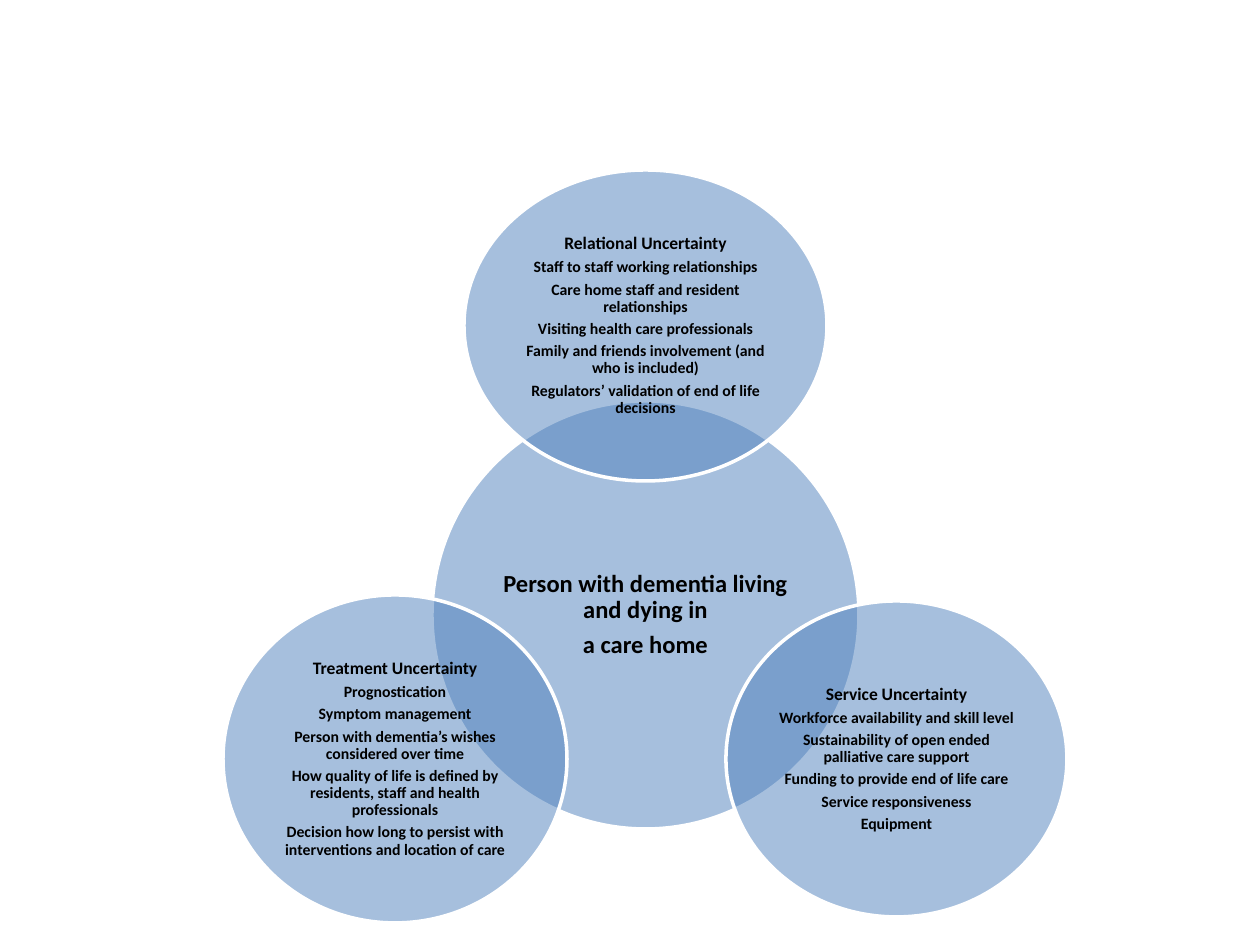
from dataclasses import dataclass

from lxml import etree
from pptx import Presentation
from pptx.dml.color import RGBColor
from pptx.enum.shapes import MSO_SHAPE
from pptx.enum.text import MSO_ANCHOR, PP_ALIGN
from pptx.oxml.ns import qn
from pptx.util import Emu, Pt

ELLIPSE = MSO_SHAPE.OVAL
CENTER = PP_ALIGN.CENTER
MIDDLE = MSO_ANCHOR.MIDDLE

PIXELS_PER_INCH = 126
EMU_PER_INCH = 914400
FONT = "Calibri"
COLORS = {"circle": "4F81BD", "outline": "FFFFFF", "text": "000000"}
OPACITY_PERCENT = 50
LINE_SPACING = 0.9
GAP_RATIO = 0.33


@dataclass(frozen=True)
class Circle:
    left: int
    top: int
    width: int
    height: int
    lines: tuple[str, ...]
    heading_size: int = 10
    body_size: int = 9
    inset: int = 1


CIRCLES = (
    Circle(432, 401, 427, 428, (
        "Person with dementia living and dying in",
        "a care home",
    ), heading_size=14, body_size=14, inset=2),
    Circle(464, 170, 363, 311, (
        "Relational Uncertainty",
        "Staff to staff working relationships",
        "Care home staff and resident relationships",
        "Visiting health care professionals",
        "Family and friends involvement (and who is included)",
        "Regulators’ validation of end of life decisions",
    )),
    Circle(726, 601, 341, 316, (
        "Service Uncertainty",
        "Workforce availability and skill level",
        "Sustainability of open ended palliative care support",
        "Funding to provide end of life care",
        "Service responsiveness",
        "Equipment",
    )),
    Circle(223, 595, 344, 328, (
        "Treatment Uncertainty",
        "Prognostication",
        "Symptom management",
        "Person with dementia’s wishes considered over time",
        "How quality of life is defined by residents, staff and health professionals",
        "Decision how long to persist with interventions and location of care",
    )),
)


def px(length: int) -> Emu:
    return Emu(round(length * EMU_PER_INCH / PIXELS_PER_INCH))


def color(name: str) -> RGBColor:
    return RGBColor.from_string(COLORS[name])


def set_opacity(shape, percent: int) -> None:
    fill_color = shape._element.spPr.find(qn("a:solidFill"))[0]
    alpha = etree.SubElement(fill_color, qn("a:alpha"))
    alpha.set("val", str(percent * 1000))


def write_paragraph(paragraph, text: str, *, size: int, bold: bool = True) -> None:
    paragraph.alignment = CENTER
    paragraph.line_spacing = LINE_SPACING
    paragraph.space_after = Pt(GAP_RATIO * size)
    run = paragraph.add_run()
    run.text = text
    run.font.name = FONT
    run.font.size = Pt(size)
    run.font.bold = bold
    run.font.color.rgb = color("text")


def draw_circle(slide, circle: Circle) -> None:
    shape = slide.shapes.add_shape(
        ELLIPSE, px(circle.left), px(circle.top), px(circle.width), px(circle.height)
    )
    shape.shadow.inherit = False
    shape.fill.solid()
    shape.fill.fore_color.rgb = color("circle")
    set_opacity(shape, OPACITY_PERCENT)
    shape.line.color.rgb = color("outline")
    shape.line.width = Pt(2)

    frame = shape.text_frame
    frame.word_wrap = True
    frame.vertical_anchor = MIDDLE
    frame.margin_left = frame.margin_right = px(circle.inset)
    frame.margin_top = frame.margin_bottom = px(circle.inset)
    for index, line in enumerate(circle.lines):
        paragraph = frame.add_paragraph() if index else frame.paragraphs[0]
        size = circle.body_size if index else circle.heading_size
        write_paragraph(paragraph, line, size=size)


def main() -> None:
    presentation = Presentation()
    presentation.slide_width = px(1260)
    presentation.slide_height = px(945)
    slide = presentation.slides.add_slide(presentation.slide_layouts[6])
    for circle in CIRCLES:
        draw_circle(slide, circle)
    presentation.save("out.pptx")


if __name__ == "__main__":
    main()
